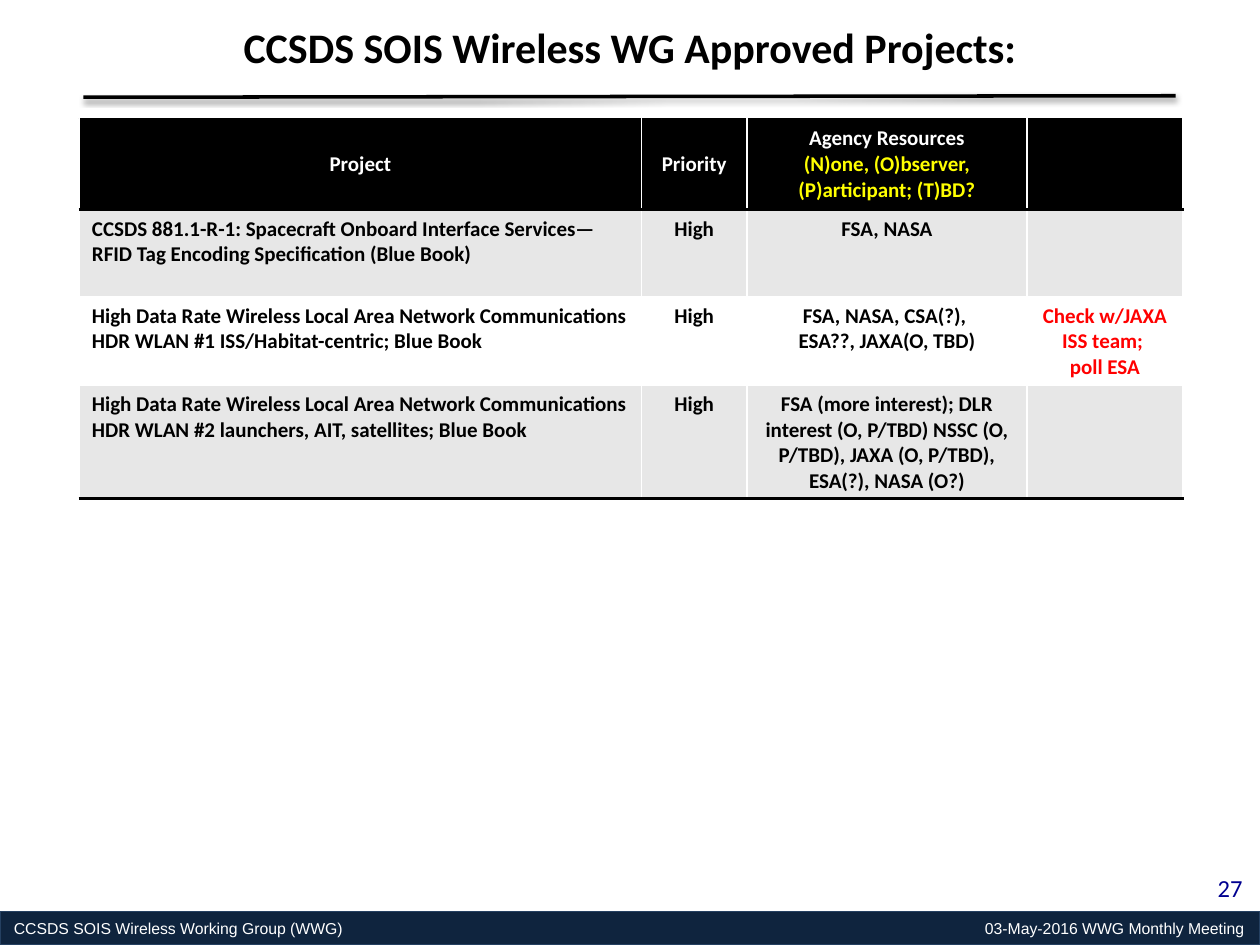
from lxml import etree
from pptx import Presentation
from pptx.dml.color import RGBColor
from pptx.enum.shapes import MSO_CONNECTOR, MSO_SHAPE
from pptx.enum.text import MSO_ANCHOR, PP_ALIGN
from pptx.oxml import parse_xml
from pptx.oxml.ns import nsdecls, qn
from pptx.util import Cm, Pt

BLACK = RGBColor(0x00, 0x00, 0x00)
WHITE = RGBColor(0xFF, 0xFF, 0xFF)
GREY = RGBColor(0xE7, 0xE7, 0xE7)
YELLOW = RGBColor(0xFF, 0xFF, 0x00)
RED = RGBColor(0xFF, 0x00, 0x00)
NAVY = RGBColor(0x0F, 0x24, 0x3E)
NAVY_LINE = RGBColor(0x25, 0x40, 0x61)
PAGE_BLUE = RGBColor(0x00, 0x00, 0x90)


def add_text(p, text, size, color, bold=False, font="Calibri", align=PP_ALIGN.LEFT):
    p.alignment = align
    r = p.add_run()
    r.text = text
    r.font.name = font
    r.font.size = Pt(size)
    r.font.bold = bold
    r.font.color.rgb = color


def add_border(cell, side):
    ln = parse_xml(
        f'<a:{side} {nsdecls("a")} w="25400"><a:solidFill>'
        f'<a:srgbClr val="{BLACK}"/></a:solidFill></a:{side}>')
    tcPr = cell._tc.get_or_add_tcPr()
    # Borders come before the fill, top before bottom
    tcPr.insert(len(tcPr.findall(qn("a:lnT"))), ln)


prs = Presentation()
prs.slide_width, prs.slide_height = Cm(25.4), Cm(19.05)
s = prs.slides.add_slide(prs.slide_layouts[6])

# Footer bar, its two texts parted by a right tab
sp = s.shapes.add_shape(MSO_SHAPE.RECTANGLE, Cm(0), Cm(18.38), Cm(25.4), Cm(0.67))
sp.shadow.inherit = False
sp.fill.solid()
sp.fill.fore_color.rgb = NAVY
sp.line.color.rgb = NAVY_LINE
sp.line.width = Pt(0.75)
tf = sp.text_frame
tf.margin_left = tf.margin_right = Cm(0.28)
tf.margin_top = tf.margin_bottom = Cm(0.1)
p = tf.paragraphs[0]
add_text(p, "CCSDS SOIS Wireless Working Group (WWG)\t03-May-2016 WWG Monthly Meeting",
         9, WHITE, font="Arial")
tabs = etree.SubElement(p._p.get_or_add_pPr(), qn("a:tabLst"))
etree.SubElement(tabs, qn("a:tab"), pos=str(Cm(24.8)), algn="r")

# Page number
tf = s.shapes.add_textbox(Cm(23.62), Cm(17.48), Cm(1.68), Cm(0.89)).text_frame
tf.word_wrap = True
add_text(tf.paragraphs[0], "27", 14, PAGE_BLUE, align=PP_ALIGN.RIGHT)

# Project table: each cell is a list of (text, colour) paragraphs
rows = [
    [[("Project", WHITE)], [("Priority", WHITE)],
     [("Agency Resources", WHITE), ("(N)one, (O)bserver, (P)articipant; (T)BD?", YELLOW)], []],
    [[("CCSDS 881.1-R-1: Spacecraft Onboard Interface Services—"
       "RFID Tag Encoding Specification (Blue Book)", BLACK)],
     [("High", BLACK)], [("FSA, NASA", BLACK)], []],
    [[("High Data Rate Wireless Local Area Network Communications "
       "HDR WLAN #1 ISS/Habitat-centric; Blue Book", BLACK)],
     [("High", BLACK)], [("FSA, NASA, CSA(?), ", BLACK), ("ESA??, JAXA(O, TBD)", BLACK)],
     [("Check w/JAXA ISS team; ", RED), ("poll ESA", RED)]],
    [[("High Data Rate Wireless Local Area Network Communications "
       "HDR WLAN #2 launchers, AIT, satellites; Blue Book", BLACK)],
     [("High", BLACK)],
     [("FSA (more interest); DLR interest (O, P/TBD) NSSC (O, P/TBD), "
       "JAXA (O, P/TBD), ESA(?), NASA (O?)", BLACK)], []],
]
col_widths = [11.33, 2.13, 5.64, 3.15]
row_heights = [1.83, 1.76, 1.78, 2.27]
row_fills = [BLACK, GREY, WHITE, GREY]
table = s.shapes.add_table(len(rows), len(col_widths), Cm(1.6), Cm(2.4),
                           Cm(sum(col_widths)), Cm(sum(row_heights))).table
for col, width in zip(table.columns, col_widths):
    col.width = Cm(width)
for i, row in enumerate(rows):
    table.rows[i].height = Cm(row_heights[i])
    for j, paragraphs in enumerate(row):
        cell = table.cell(i, j)
        cell.fill.solid()
        cell.fill.fore_color.rgb = row_fills[i]
        cell.vertical_anchor = MSO_ANCHOR.MIDDLE if i == 0 else MSO_ANCHOR.TOP
        align = PP_ALIGN.LEFT if i > 0 and j == 0 else PP_ALIGN.CENTER
        tf = cell.text_frame
        for n, (text, color) in enumerate(paragraphs):
            p = tf.add_paragraph() if n else tf.paragraphs[0]
            add_text(p, text, 12, color, bold=True, align=align)
        if i == 0:
            add_border(cell, "lnT")
        if i in (0, len(rows) - 1):
            add_border(cell, "lnB")

# Title
tf = s.shapes.add_textbox(Cm(4.55), Cm(0.3), Cm(16.3), Cm(1.27)).text_frame
tf.word_wrap = False
add_text(tf.paragraphs[0], "CCSDS SOIS Wireless WG Approved Projects:", 24, BLACK,
         bold=True, align=PP_ALIGN.CENTER)

# Rule under the title, with a soft shadow
rule = s.shapes.add_connector(MSO_CONNECTOR.STRAIGHT, Cm(1.68), Cm(1.96), Cm(23.7), Cm(1.93))
rule.line.color.rgb = BLACK
rule.line.width = Pt(2)
rule._element.spPr.append(parse_xml(
    f'<a:effectLst {nsdecls("a")}><a:outerShdw blurRad="{Pt(3.1)}" dist="{Pt(1.6)}" '
    f'dir="5400000" rotWithShape="0"><a:srgbClr val="{BLACK}"><a:alpha val="38000"/>'
    '</a:srgbClr></a:outerShdw></a:effectLst>'))

prs.save("out.pptx")
